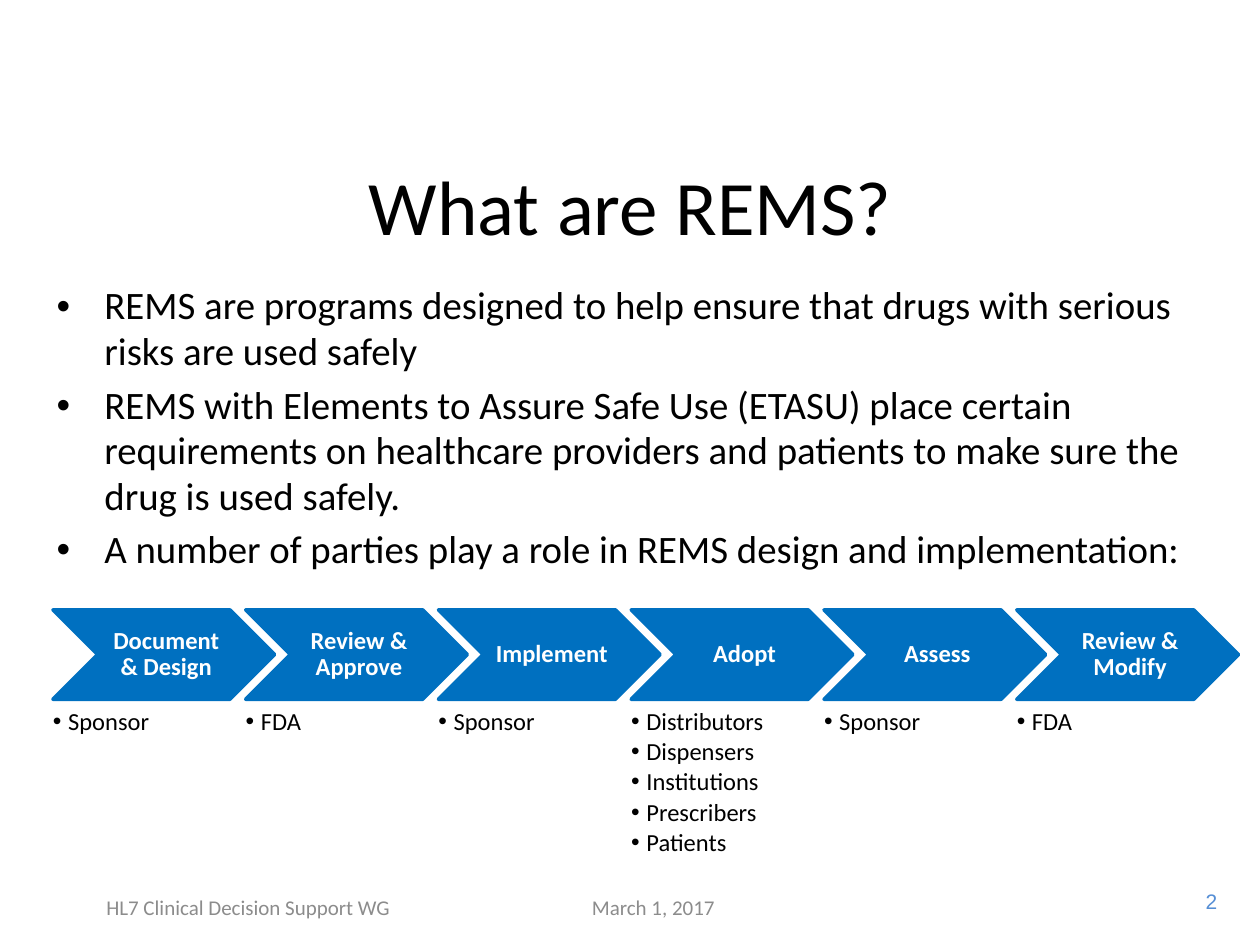
import pptx
import pptx.dml.color
import pptx.enum.shapes
import pptx.enum.text
import pptx.oxml.ns
import pptx.util
import lxml.etree

Inches, Pt = pptx.util.Inches, pptx.util.Pt
Align = pptx.enum.text.PP_ALIGN
Anchor = pptx.enum.text.MSO_ANCHOR
RGBColor = pptx.dml.color.RGBColor

BLACK = RGBColor(0x00, 0x00, 0x00)
WHITE = RGBColor(0xFF, 0xFF, 0xFF)
STEP_BLUE = RGBColor(0x00, 0x70, 0xC0)
FOOTER_GREY = RGBColor(0x8C, 0x8C, 0x8C)
NUMBER_BLUE = RGBColor(0x55, 0x8E, 0xD5)

COLUMNS, ROWS = 100, 75

POINTS = [
    "REMS are programs designed to help ensure that drugs with serious risks are used safely",
    "REMS with Elements to Assure Safe Use (ETASU) place certain requirements on "
    "healthcare providers and patients to make sure the drug is used safely.",
    "A number of parties play a role in REMS design and implementation:",
]
STEPS = [
    ("Document & Design", ["Sponsor"]),
    ("Review & Approve", ["FDA"]),
    ("Implement", ["Sponsor"]),
    ("Adopt", ["Distributors", "Dispensers", "Institutions", "Prescribers", "Patients"]),
    ("Assess", ["Sponsor"]),
    ("Review & Modify", ["FDA"]),
]


class SlideBuilder:
    """Draws on one slide; every box is (column, row, columns wide, rows high)."""

    font = "Calibri"

    def __init__(self, deck):
        self.slide = deck.slides.add_slide(deck.slide_layouts[6])
        self.column = deck.slide_width / COLUMNS
        self.row = deck.slide_height / ROWS

    def place(self, box):
        left, top, width, height = box
        return [int(left * self.column), int(top * self.row),
                int(width * self.column), int(height * self.row)]

    def add_text(self, paragraph, wording, size, color, font=None, bold=False):
        run = paragraph.add_run()
        run.text = wording
        run.font.name = font or self.font
        run.font.size = Pt(size)
        run.font.bold = bold
        run.font.color.rgb = color

    def frame(self, box, inset=None):
        frame = self.slide.shapes.add_textbox(*self.place(box)).text_frame
        frame.word_wrap = True
        if inset is not None:
            self.set_insets(frame, inset, inset)
        return frame

    def set_insets(self, frame, left, others):
        frame.margin_left = Inches(left)
        frame.margin_right = frame.margin_top = frame.margin_bottom = Inches(others)

    def label(self, box, wording, size, color, align=Align.CENTER,
              anchor=Anchor.MIDDLE, font=None):
        frame = self.frame(box)
        frame.vertical_anchor = anchor
        frame.paragraphs[0].alignment = align
        self.add_text(frame.paragraphs[0], wording, size, color, font)

    def bullets(self, box, items, size, indent, spacing, before=0, after=0, inset=None):
        frame = self.frame(box, inset)
        for index, item in enumerate(items):
            paragraph = frame.add_paragraph() if index else frame.paragraphs[0]
            properties = paragraph._p.get_or_add_pPr()
            properties.set("marL", str(Inches(indent)))
            properties.set("indent", str(-Inches(indent)))
            typeface = lxml.etree.SubElement(properties, pptx.oxml.ns.qn("a:buFont"))
            typeface.set("typeface", "Arial")
            mark = lxml.etree.SubElement(properties, pptx.oxml.ns.qn("a:buChar"))
            mark.set("char", "•")
            paragraph.line_spacing = spacing
            paragraph.space_after = Pt(after)
            if index:
                paragraph.space_before = Pt(before)
            self.add_text(paragraph, item, size, BLACK)

    def chevron(self, box, wording):
        shape = self.slide.shapes.add_shape(
            pptx.enum.shapes.MSO_SHAPE.CHEVRON, *self.place(box))
        shape.shadow.inherit = False
        shape.fill.solid()
        shape.fill.fore_color.rgb = STEP_BLUE
        shape.line.color.rgb = STEP_BLUE
        shape.line.width = Pt(2)
        frame = shape.text_frame
        frame.word_wrap = True
        frame.vertical_anchor = Anchor.MIDDLE
        self.set_insets(frame, 0.06, 0.02)
        paragraph = frame.paragraphs[0]
        paragraph.alignment = Align.CENTER
        paragraph.line_spacing = 0.9
        self.add_text(paragraph, wording, 14, WHITE, bold=True)


def main():
    deck = pptx.Presentation()
    deck.slide_width, deck.slide_height = Inches(10), Inches(7.5)
    page = SlideBuilder(deck)

    page.label((93.5, 70, 4.1, 3), "2", 12, NUMBER_BLUE,
               align=Align.RIGHT, anchor=Anchor.TOP, font="Arial")
    page.label((3.5, 11.2, 93.1, 10.1), "What are REMS?", 44, BLACK)
    page.bullets((3.5, 22, 93.1, 25.5), POINTS, 22.2, indent=0.38, spacing=0.98, before=4.4)
    page.label((40.2, 70, 23.3, 4), "March 1, 2017", 12, FOOTER_GREY)
    page.label((2.7, 70, 34, 4), "HL7 Clinical Decision Support WG", 12, FOOTER_GREY)

    first_step, step_pitch = 4.2, 15.3
    for index, (step, parties) in enumerate(STEPS):
        left = first_step + index * step_pitch
        page.chevron((left, 48.4, 17.6, 7.1), step)
        page.bullets((left, 56.3, 14.1, 12.8), parties, 14,
                     indent=0.12, spacing=0.9, after=2.1, inset=0)

    deck.save("out.pptx")


if __name__ == "__main__":
    main()
